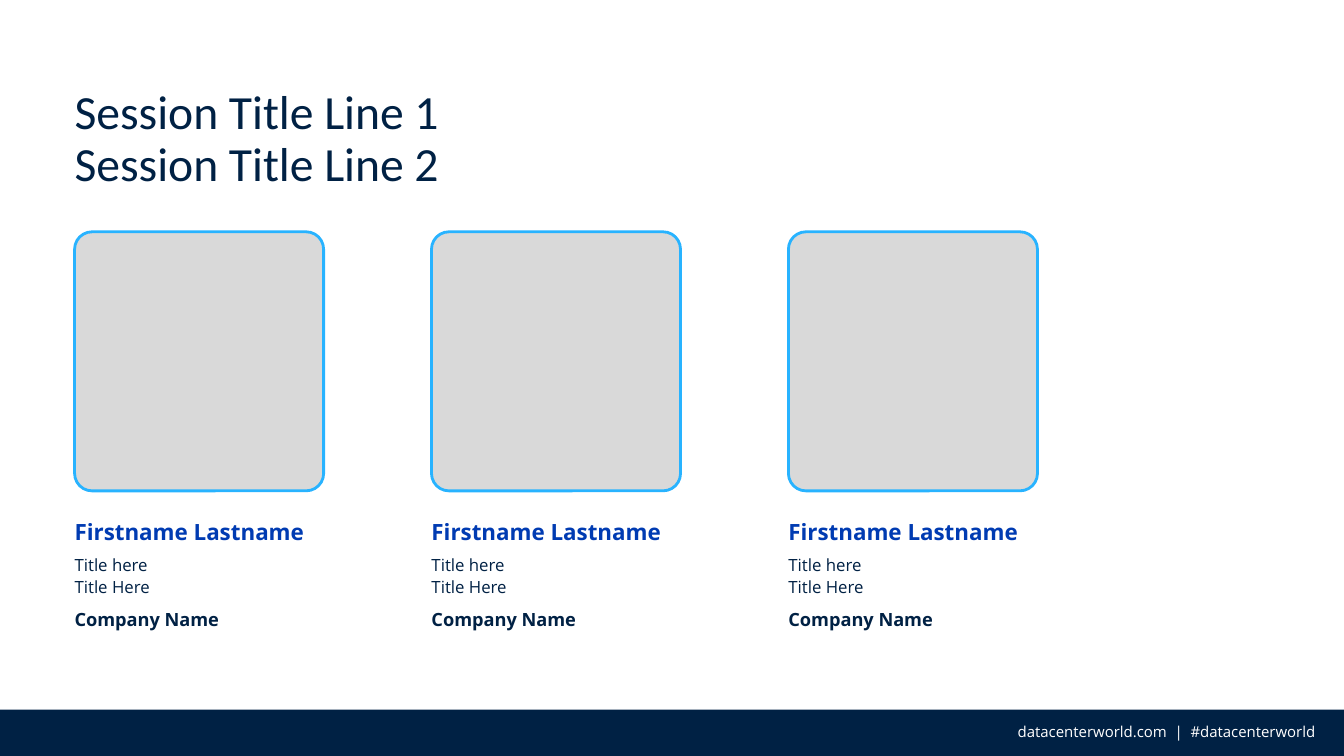
import copy
from dataclasses import dataclass

import pptx
import pptx.dml.color
import pptx.enum.shapes
import pptx.enum.text
import pptx.oxml.ns
import pptx.util
from pptx.util import Inches


@dataclass(frozen=True)
class Theme:
    navy: str = "002144"
    blue: str = "003BB2"
    sky: str = "28B3FF"
    grey: str = "D9D9D9"
    white: str = "FFFFFF"
    title_font: str = "Calibri"
    body_font: str = "Open Sans"
    title_size: float = 34
    name_size: float = 16
    role_size: float = 12
    company_size: float = 13
    footer_size: float = 10.7


THEME = Theme()
ANCHOR = pptx.enum.text.MSO_ANCHOR
SHAPES = pptx.enum.shapes.MSO_SHAPE


def rgb(color):
    return pptx.dml.color.RGBColor.from_string(color)


def add_panel(slide, kind, left, top, width, height, fill):
    shape = slide.shapes.add_shape(kind, left, top, width, height)
    shape.shadow.inherit = False
    shape.fill.solid()
    shape.fill.fore_color.rgb = rgb(fill)
    shape.line.fill.background()
    return shape


def add_text_frame(slide, left, top, width, height, anchor):
    frame = slide.shapes.add_textbox(left, top, width, height).text_frame
    frame.margin_left = frame.margin_top = 0
    frame.margin_right = frame.margin_bottom = 0
    frame.word_wrap = True
    frame.vertical_anchor = anchor
    return frame


def write_paragraph(paragraph, text, font, size, color, spacing, bold=False):
    paragraph.text = text
    paragraph.line_spacing = spacing
    for run in paragraph.runs:
        run.font.name = font
        run.font.size = pptx.util.Pt(size)
        run.font.bold = bold
        run.font.color.rgb = rgb(color)
    run_format = paragraph.runs[0].font._element
    for line_break in paragraph._p.findall(pptx.oxml.ns.qn("a:br")):
        line_break.insert(0, copy.deepcopy(run_format))


def add_title(slide, left, top, width, height):
    frame = add_text_frame(slide, left, top, width, height, ANCHOR.MIDDLE)
    write_paragraph(frame.paragraphs[0], "Session Title Line 1\vSession Title Line 2",
                    THEME.title_font, THEME.title_size, THEME.navy, 0.9)


def add_speaker(slide, left, top, width, height, details):
    portrait = add_panel(slide, SHAPES.ROUNDED_RECTANGLE, left, top,
                         width - Inches(0.2), Inches(2.57), THEME.grey)
    portrait.adjustments[0] = 0.07
    portrait.line.color.rgb = rgb(THEME.sky)
    portrait.line.width = pptx.util.Pt(2)

    text_offset = Inches(2.81)
    frame = add_text_frame(slide, left, top + text_offset, width,
                           height - text_offset, ANCHOR.TOP)
    styles = [
        (THEME.name_size, THEME.blue, True),
        (THEME.role_size, THEME.navy, False),
        (THEME.company_size, THEME.navy, True),
    ]
    for index, (text, (size, color, bold)) in enumerate(zip(details, styles)):
        paragraph = frame.add_paragraph() if index else frame.paragraphs[0]
        write_paragraph(paragraph, text, THEME.body_font, size, color, 1.1, bold)
        if index:
            paragraph.space_before = pptx.util.Pt(6)


def add_footer(slide, left, top, width, height):
    add_panel(slide, SHAPES.RECTANGLE, left, top, width, height, THEME.navy)
    text_width = Inches(7.3)
    frame = add_text_frame(slide, left + width - Inches(0.28) - text_width,
                           top + Inches(0.15), text_width, Inches(0.16), ANCHOR.MIDDLE)
    paragraph = frame.paragraphs[0]
    write_paragraph(paragraph, "datacenterworld.com  |  #datacenterworld",
                    THEME.body_font, THEME.footer_size, THEME.white, 0.9)
    paragraph.alignment = pptx.enum.text.PP_ALIGN.RIGHT


def main():
    presentation = pptx.Presentation()
    presentation.slide_width = Inches(13.33)
    presentation.slide_height = Inches(7.5)
    slide = presentation.slides.add_slide(presentation.slide_layouts[6])

    margin = Inches(0.74)
    footer_top = Inches(7.04)
    add_footer(slide, 0, footer_top, presentation.slide_width,
               presentation.slide_height - footer_top)
    add_title(slide, margin, Inches(0.87), Inches(11.75), Inches(1.04))

    speakers = [("Firstname Lastname", "Title here\vTitle Here", "Company Name")] * 3
    column_pitch = Inches(3.54)
    for column, details in enumerate(speakers):
        add_speaker(slide, margin + column * column_pitch, Inches(2.3),
                    Inches(2.67), Inches(3.98), details)

    presentation.save("out.pptx")


if __name__ == "__main__":
    main()
